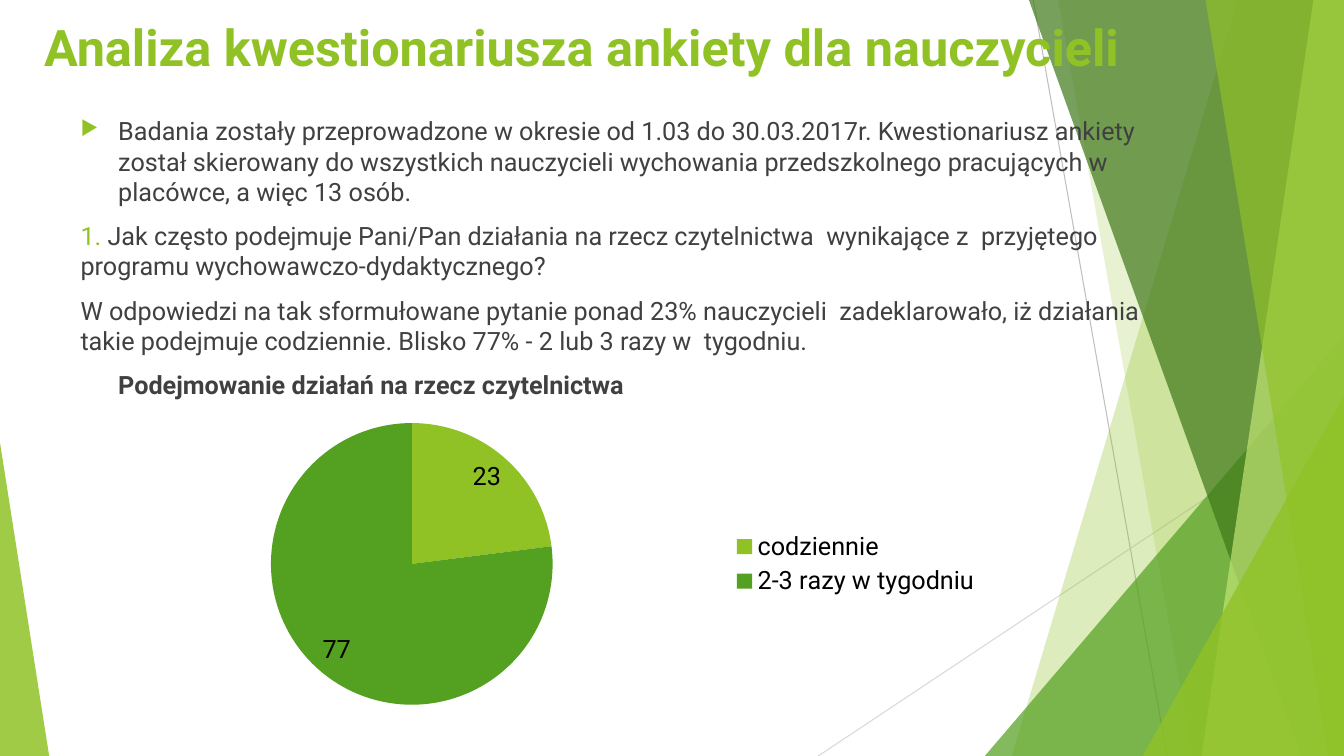
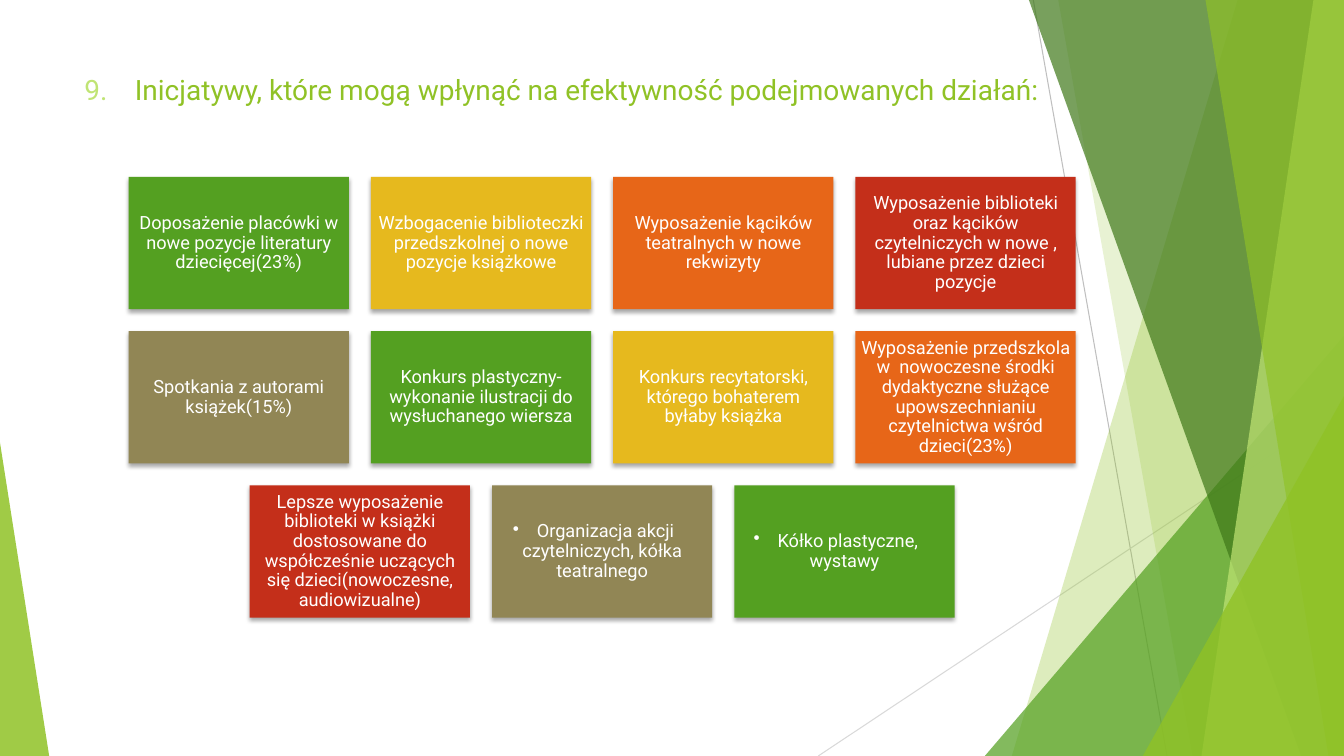
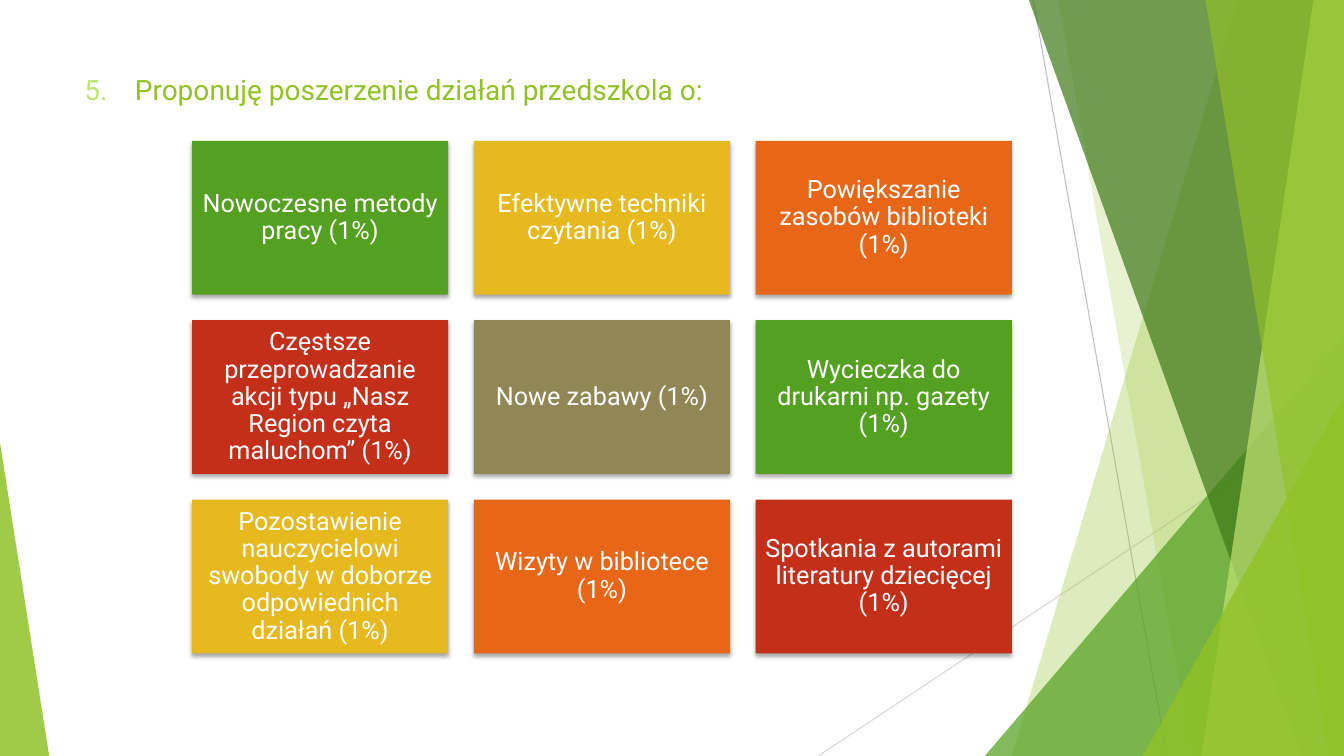
from itertools import cycle

from lxml import etree
from pptx import Presentation
from pptx.chart.data import CategoryChartData
from pptx.dml.color import RGBColor
from pptx.enum.chart import XL_CHART_TYPE, XL_LABEL_POSITION, XL_LEGEND_POSITION
from pptx.enum.shapes import MSO_CONNECTOR, MSO_SHAPE
from pptx.enum.text import MSO_ANCHOR, PP_ALIGN
from pptx.oxml.ns import qn
from pptx.util import Cm, Pt

PIE = XL_CHART_TYPE.PIE
INSIDE_END = XL_LABEL_POSITION.INSIDE_END
LEGEND_RIGHT = XL_LEGEND_POSITION.RIGHT
STRAIGHT = MSO_CONNECTOR.STRAIGHT
RECTANGLE = MSO_SHAPE.RECTANGLE
TRIANGLE = MSO_SHAPE.ISOSCELES_TRIANGLE
MIDDLE = MSO_ANCHOR.MIDDLE
CENTER = PP_ALIGN.CENTER

FONT = "Roboto"
LIME = RGBColor(0x90, 0xC2, 0x26)
PALE_LIME = RGBColor(0xC0, 0xE4, 0x74)
GREEN = RGBColor(0x54, 0xA0, 0x21)
DARK_GREEN = RGBColor(0x3F, 0x78, 0x19)
YELLOW = RGBColor(0xE6, 0xB9, 0x1E)
ORANGE = RGBColor(0xE7, 0x66, 0x18)
RED = RGBColor(0xC4, 0x2F, 0x1A)
OLIVE = RGBColor(0x91, 0x86, 0x55)
WHITE = RGBColor(0xFF, 0xFF, 0xFF)
BLACK = RGBColor(0x00, 0x00, 0x00)
INK = RGBColor(0x40, 0x40, 0x40)
GREY = RGBColor(0xBF, 0xBF, 0xBF)
LIGHT_GREY = RGBColor(0xD9, 0xD9, 0xD9)
CARD_COLOURS = (GREEN, YELLOW, ORANGE, RED, OLIVE)

WIDTH, HEIGHT = 33.87, 19.05
RAYS = (
    ((26.04, 0), (29.41, HEIGHT), GREY),
    ((WIDTH, 10.24), (20.62, HEIGHT), LIGHT_GREY),
)
BACK_BANDS = ((31.19, 25.5, LIME, 30), (26.67, 30.05, LIME, 20))
FRONT_BANDS = (
    (25.93, 32.79, DARK_GREEN, 70),
    (33.1, 30.28, PALE_LIME, 70),
    (30.38, 33.48, LIME, 65),
)
BACK_CORNER = (24.82, 8.46, WIDTH, 1, GREEN, 72)
FRONT_CORNERS = ((28.8, 9.98, WIDTH, 1, LIME, 80), (0, 11.15, 1.24, 0, LIME, 85))

INTRO = (
    "Badania zostały przeprowadzone w okresie od 1.03 do 30.03.2017r. "
    "Kwestionariusz ankiety został skierowany do wszystkich nauczycieli "
    "wychowania przedszkolnego pracujących w placówce, a więc 13 osób."
)
QUESTION = (
    "Jak często podejmuje Pani/Pan działania na rzecz czytelnictwa  "
    "wynikające z  przyjętego programu wychowawczo-dydaktycznego?"
)
ANSWER = (
    "W odpowiedzi na tak sformułowane pytanie ponad 23% nauczycieli  "
    "zadeklarowało, iż działania takie podejmuje codziennie. "
    "Blisko 77% - 2 lub 3 razy w  tygodniu."
)
INITIATIVES = (
    "Doposażenie placówki w nowe pozycje literatury dziecięcej(23%)",
    "Wzbogacenie biblioteczki przedszkolnej o nowe pozycje książkowe",
    "Wyposażenie kącików teatralnych w nowe rekwizyty",
    "Wyposażenie biblioteki oraz kącików czytelniczych w nowe , lubiane przez dzieci pozycje",
    "Spotkania z autorami książek(15%)",
    "Konkurs plastyczny- wykonanie ilustracji do wysłuchanego wiersza",
    "Konkurs recytatorski, którego bohaterem byłaby książka",
    "Wyposażenie przedszkola w  nowoczesne środki dydaktyczne służące "
    "upowszechnianiu czytelnictwa wśród dzieci(23%)",
    "Lepsze wyposażenie biblioteki w książki dostosowane do współcześnie "
    "uczących się dzieci(nowoczesne, audiowizualne)",
    "Organizacja akcji czytelniczych, kółka teatralnego",
    "Kółko plastyczne, wystawy",
)
PROPOSALS = (
    "Nowoczesne metody pracy (1%)",
    "Efektywne techniki czytania (1%)",
    "Powiększanie zasobów biblioteki (1%)",
    "Częstsze przeprowadzanie akcji typu „Nasz Region czyta maluchom” (1%)",
    "Nowe zabawy (1%)",
    "Wycieczka do drukarni np. gazety (1%)",
    "Pozostawienie nauczycielowi swobody w doborze odpowiednich działań (1%)",
    "Wizyty w bibliotece (1%)",
    "Spotkania z autorami literatury dziecięcej (1%)",
)


def lengths(*values):
    """Turn centimetre values into lengths."""
    return [Cm(value) for value in values]


def set_values(target, values):
    """Set every attribute in the dict on the target."""
    for name, value in values.items():
        setattr(target, name, value)


def add_node(parent, tag, **attributes):
    """Append a drawing element with the given attributes."""
    node = etree.SubElement(parent, qn(tag))
    for name, value in attributes.items():
        node.set(name, str(value))
    return node


def paint(shape, colour, opacity=100):
    """Give a shape a flat fill without line or shadow."""
    shape.shadow.inherit = False
    shape.line.fill.background()
    shape.fill.solid()
    shape.fill.fore_color.rgb = colour
    if opacity < 100:
        tone = shape.element.spPr.find(qn("a:solidFill"))[0]
        add_node(tone, "a:alpha", val=opacity * 1000)


def add_spans(para, size, *spans):
    """Write (text, colour, bold) spans into a paragraph."""
    for text, colour, bold in spans:
        span = para.add_run()
        span.text = text
        set_values(span.font, {"name": FONT, "size": Pt(size), "bold": bold})
        span.font.color.rgb = colour


def indent(para, left, first):
    """Set the left margin and first-line indent of a paragraph."""
    settings = para._p.get_or_add_pPr()
    settings.set("marL", str(Cm(left)))
    settings.set("indent", str(Cm(first)))


def add_bullet(para, symbol, colour, percent):
    """Put a bullet symbol before a paragraph."""
    settings = para._p.get_or_add_pPr()
    add_node(add_node(settings, "a:buClr"), "a:srgbClr", val=colour)
    add_node(settings, "a:buSzPct", val=percent * 1000)
    add_node(settings, "a:buChar", char=symbol)


def add_text_frame(page, box):
    """Add a wrapping text box and return its frame."""
    frame = page.shapes.add_textbox(*lengths(*box)).text_frame
    frame.word_wrap = True
    return frame


def add_band(page, top_x, bottom_x, colour, opacity):
    """Draw a band reaching from a slanted edge to the right side."""
    builder = page.shapes.build_freeform(Cm(top_x), 0)
    corners = ((WIDTH, 0), (WIDTH, HEIGHT), (bottom_x, HEIGHT))
    builder.add_line_segments([lengths(*corner) for corner in corners])
    paint(builder.convert_to_shape(), colour, opacity)


def add_corner(page, left, top, right, apex, colour, opacity):
    """Draw a triangle standing on the bottom edge."""
    box = lengths(left, top, right - left, HEIGHT - top)
    triangle = page.shapes.add_shape(TRIANGLE, *box)
    triangle.adjustments[0] = apex
    paint(triangle, colour, opacity)


def add_backdrop(page):
    """Draw the rays, bands and corners shared by all slides."""
    for start, end, colour in RAYS:
        ray = page.shapes.add_connector(STRAIGHT, *lengths(*start, *end))
        ray.line.width = Pt(0.75)
        ray.line.color.rgb = colour
        add_node(ray.element.spPr, "a:effectLst")
    for band in BACK_BANDS:
        add_band(page, *band)
    add_corner(page, *BACK_CORNER)
    for band in FRONT_BANDS:
        add_band(page, *band)
    for corner in FRONT_CORNERS:
        add_corner(page, *corner)


def add_page(deck):
    """Add a blank slide with the shared backdrop."""
    page = deck.slides.add_slide(deck.slide_layouts[6])
    add_backdrop(page)
    return page


def add_numbered_title(page, box, number, text):
    """Write a title with a pale number and a hanging indent."""
    para = add_text_frame(page, box).paragraphs[0]
    indent(para, 1.27, -1.27)
    add_spans(para, 20, (f"{number}.\t", PALE_LIME, False), (text, LIME, False))


def add_card(page, box, text, colour, size, inset, bulleted):
    """Draw one shadowed card with centred text."""
    card = page.shapes.add_shape(RECTANGLE, *box)
    paint(card, colour)
    effects = card.element.spPr.find(qn("a:effectLst"))
    shadow = add_node(effects, "a:outerShdw", blurRad=Pt(3), dist=Pt(2),
                      dir=5400000, algn="ctr", rotWithShape=0)
    tone = add_node(shadow, "a:srgbClr", val=BLACK)
    add_node(tone, "a:alpha", val=35000)
    frame = card.text_frame
    set_values(frame, {"word_wrap": True, "vertical_anchor": MIDDLE})
    set_values(frame, {f"margin_{side}": Cm(inset)
                       for side in ("left", "top", "right", "bottom")})
    para = frame.paragraphs[0]
    set_values(para, {"alignment": CENTER, "line_spacing": 0.9})
    if bulleted:
        add_bullet(para, "•", WHITE, 100)
    add_spans(para, size, (text, WHITE, False))


def add_card_grid(page, box, columns, texts, size, inset, bulleted=0):
    """Lay cards out in rows, centring a short last row."""
    left, top, width = box
    card_width = width / (columns + 0.1 * (columns - 1))
    card_height = 0.6 * card_width
    gap = 0.1 * card_width
    for index, (text, colour) in enumerate(zip(texts, cycle(CARD_COLOURS))):
        row, column = divmod(index, columns)
        missing = columns - min(columns, len(texts) - row * columns)
        x = left + (column + missing / 2) * (card_width + gap)
        y = top + row * (card_height + gap)
        place = lengths(x, y, card_width, card_height)
        add_card(page, place, text, colour, size, inset,
                 index >= len(texts) - bulleted)


def add_survey_text(page, box):
    """Write the introduction, question, answer and chart heading."""
    frame = add_text_frame(page, box)
    content = (
        [(INTRO, INK, False)],
        [("1. ", LIME, False), (QUESTION, INK, False)],
        [(ANSWER, INK, False)],
        [("Podejmowanie działań na rzecz czytelnictwa", INK, True)],
    )
    for index, spans in enumerate(content):
        para = frame.add_paragraph() if index else frame.paragraphs[0]
        para.space_before = Pt(10)
        add_spans(para, 18, *spans)
    intro, heading = frame.paragraphs[0], frame.paragraphs[-1]
    indent(intro, 0.95, -0.95)
    add_bullet(intro, "▶", LIME, 80)
    indent(heading, 0.95, 0)


def add_frequency_chart(page, box):
    """Add the pie chart of how often activities take place."""
    data = CategoryChartData()
    data.categories = ["codziennie", "2-3 razy w tygodniu"]
    data.add_series("Series 1", (23, 77))
    chart = page.shapes.add_chart(PIE, *lengths(*box), data).chart
    set_values(chart, {"has_title": False, "has_legend": True})
    set_values(chart.legend, {"position": LEGEND_RIGHT, "include_in_layout": False})
    set_values(chart.font, {"name": FONT, "size": Pt(18)})
    chart.font.color.rgb = BLACK
    plot = chart.plots[0]
    set_values(plot, {"vary_by_categories": True, "has_data_labels": True})
    set_values(plot.data_labels, {"show_value": True, "show_percentage": False,
                                  "position": INSIDE_END})
    for index, colour in enumerate((LIME, GREEN)):
        fill = plot.series[0].points[index].format.fill
        fill.solid()
        fill.fore_color.rgb = colour


def build_survey(deck):
    """Build the slide with the survey text and pie chart."""
    page = add_page(deck)
    title = add_text_frame(page, (0.86, 0.28, 30.86, 2.21)).paragraphs[0]
    add_spans(title, 36, ("Analiza kwestionariusza ankiety dla nauczycieli", LIME, True))
    add_survey_text(page, (1.78, 2.79, 28.04, 15.65))
    add_frequency_chart(page, (2.39, 10.31, 22.58, 7.8))


def build_initiatives(deck):
    """Build the slide with the initiative cards."""
    page = add_page(deck)
    add_numbered_title(page, (1.88, 1.7, 26.09, 3.66), 9,
                       "Inicjatywy, które mogą wpłynąć na efektywność podejmowanych działań:")
    add_card_grid(page, (3.24, 4.46, 23.87), 4, INITIATIVES, 13, 0.13, bulleted=2)


def build_proposals(deck):
    """Build the slide with the proposal cards."""
    page = add_page(deck)
    add_numbered_title(page, (1.88, 1.7, 23.88, 3.66), 5,
                       "Proponuję poszerzenie działań przedszkola o:")
    add_card_grid(page, (4.84, 3.55, 20.66), 3, PROPOSALS, 18, 0.18)


def main():
    """Build and save the deck."""
    deck = Presentation()
    set_values(deck, {"slide_width": Cm(WIDTH), "slide_height": Cm(HEIGHT)})
    build_survey(deck)
    build_initiatives(deck)
    build_proposals(deck)
    deck.save("out.pptx")


if __name__ == "__main__":
    main()
